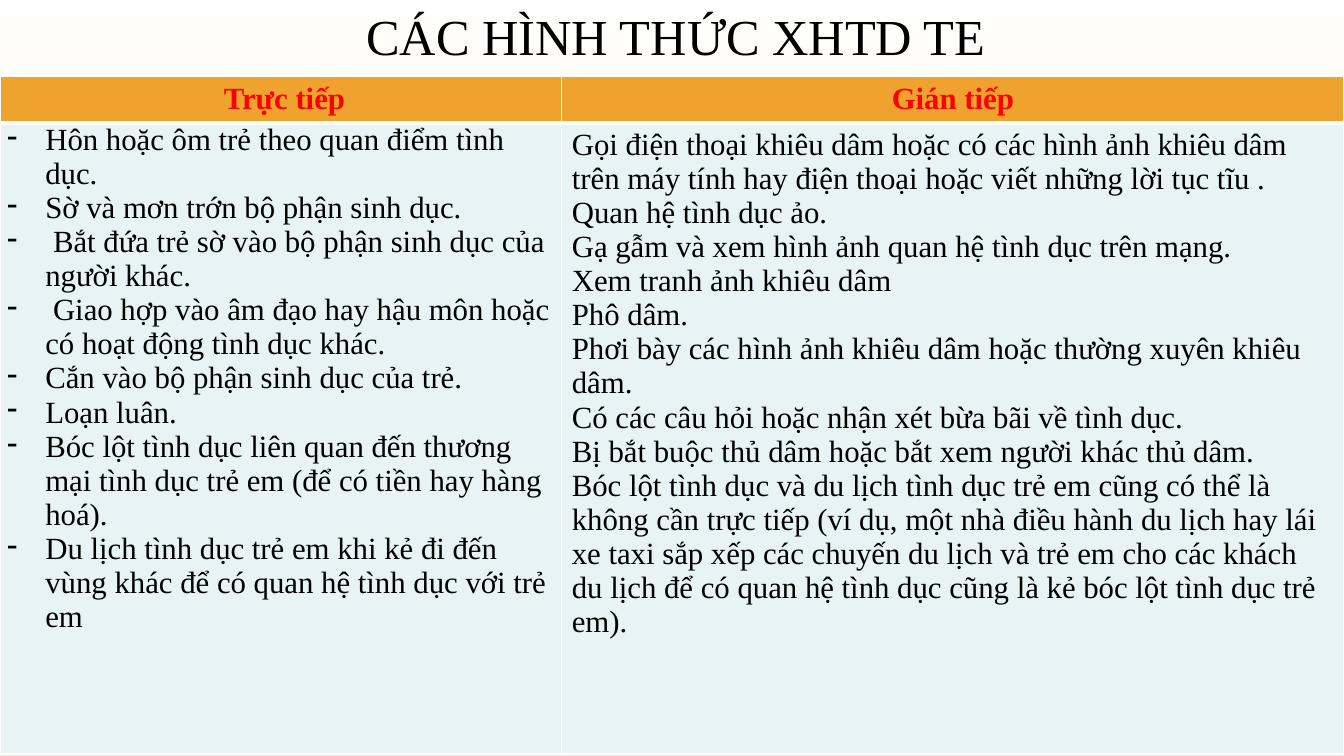
from dataclasses import dataclass

from lxml.etree import SubElement
from pptx import Presentation
from pptx.dml.color import RGBColor
from pptx.enum.text import MSO_ANCHOR, PP_ALIGN
from pptx.oxml.ns import qn
from pptx.slide import Slide
from pptx.table import _Cell
from pptx.text.text import TextFrame
from pptx.util import Emu, Inches, Pt

WIDE, HIGH = Inches(13.33), Inches(7.5)


@dataclass(frozen=True)
class Theme:
    """Colours, font and type sizes of the slide."""

    font: str = "Times New Roman"
    title: int = 36
    body: int = 22
    ink: str = "000000"
    red: str = "FF0000"
    head: str = "F0A22E"
    pale: str = "E7F3F4"
    rule: str = "FFFFFF"
    top: str = "FFFFFF"
    base: str = "FFE7A3"


@dataclass(frozen=True)
class Column:
    """One table column: its heading, share of the width and lines."""

    head: str
    share: float
    lines: tuple[str, ...]
    dash: bool = False


THEME = Theme()
TITLE = "CÁC HÌNH THỨC XHTD TE"
ROWS = (0.46, 6.26)
COLUMNS = (
    Column(" Trực tiếp", 0.418, (
        "Hôn hoặc ôm trẻ theo quan điểm tình dục.",
        "Sờ và mơn trớn bộ phận sinh dục.",
        " Bắt đứa trẻ sờ vào bộ phận sinh dục của người khác.",
        " Giao hợp vào âm đạo hay hậu môn hoặc có hoạt động tình dục khác.",
        "Cắn vào bộ phận sinh dục của trẻ.",
        "Loạn luân.",
        "Bóc lột tình dục liên quan đến thương mại tình dục trẻ em "
        "(để có tiền hay hàng hoá).",
        "Du lịch tình dục trẻ em khi kẻ đi đến vùng khác để có quan hệ "
        "tình dục với trẻ em",
    ), dash=True),
    Column("Gián tiếp", 0.582, (
        "Gọi điện thoại khiêu dâm hoặc có các hình ảnh khiêu dâm trên máy "
        "tính hay điện thoại hoặc viết những lời tục tĩu .",
        "Quan hệ tình dục ảo.",
        "Gạ gẫm và xem hình ảnh quan hệ tình dục trên mạng.",
        "Xem tranh ảnh khiêu dâm",
        "Phô dâm.",
        "Phơi bày các hình ảnh khiêu dâm hoặc thường xuyên khiêu dâm.",
        "Có các câu hỏi hoặc nhận xét bừa bãi về tình dục.",
        "Bị bắt buộc thủ dâm hoặc bắt xem người khác thủ dâm.",
        "Bóc lột tình dục và du lịch tình dục trẻ em cũng có thể là không "
        "cần trực tiếp (ví dụ, một nhà điều hành du lịch hay lái xe taxi "
        "sắp xếp các chuyến du lịch và trẻ em cho các khách du lịch để có "
        "quan hệ tình dục cũng là kẻ bóc lột tình dục trẻ em).",
    )),
)


def write(frame: TextFrame, *lines: str, size: int = THEME.body,
          color: str = THEME.ink, bold: bool = False,
          align: PP_ALIGN = PP_ALIGN.LEFT, space: float = 1.0,
          dash: bool = False) -> None:
    """Fill a text frame with one formatted paragraph per line."""
    for i, line in enumerate(lines):
        para = frame.add_paragraph() if i else frame.paragraphs[0]
        para.alignment = align
        para.line_spacing = space
        if dash:
            props = para._p.get_or_add_pPr()
            props.set("marL", str(Inches(0.38)))
            props.set("indent", str(-Inches(0.38)))
            SubElement(props, qn("a:buChar")).set("char", "-")
        run = para.add_run()
        run.text = line
        run.font.name = THEME.font
        run.font.size = Pt(size)
        run.font.bold = bold
        run.font.color.rgb = RGBColor.from_string(color)


def border(cell: _Cell, top: int, base: int) -> None:
    """Draw the four edges of a cell, given its top and bottom widths."""
    props = cell._tc.get_or_add_tcPr()
    edges = (("lnL", 1), ("lnR", 1), ("lnT", top), ("lnB", base))
    for i, (tag, width) in enumerate(edges):
        line = SubElement(props, qn(f"a:{tag}"), w=str(Pt(width)))
        fill = SubElement(line, qn("a:solidFill"))
        SubElement(fill, qn("a:srgbClr"), val=THEME.rule)
        props.insert(i, line)


def paint(cell: _Cell, color: str) -> None:
    """Fill a cell with one colour."""
    cell.fill.solid()
    cell.fill.fore_color.rgb = RGBColor.from_string(color)


def backdrop(slide: Slide) -> None:
    """Shade the slide from top to bottom."""
    fill = slide.background.fill
    fill.gradient()
    fill.gradient_angle = 270
    for stop, color in zip(fill.gradient_stops, (THEME.top, THEME.base)):
        stop.color.rgb = RGBColor.from_string(color)


def heading(slide: Slide) -> None:
    """Place and write the slide title."""
    title = slide.shapes.title
    title.left, title.top = Inches(1.71), Inches(0.02)
    title.width, title.height = Inches(9.99), Inches(0.73)
    title.text_frame.word_wrap = True
    title.text_frame.vertical_anchor = MSO_ANCHOR.MIDDLE
    write(title.text_frame, TITLE, size=THEME.title,
          align=PP_ALIGN.CENTER, space=0.9)


def grid(slide: Slide) -> None:
    """Build the table from its columns."""
    table = slide.shapes.add_table(
        len(ROWS), len(COLUMNS), 0, Inches(0.76), WIDE, Inches(sum(ROWS))
    ).table
    for row, high in zip(table.rows, ROWS):
        row.height = Inches(high)
    for i, col in enumerate(COLUMNS):
        table.columns[i].width = Emu(round(WIDE * col.share))
        head, body = table.cell(0, i), table.cell(1, i)
        paint(head, THEME.head)
        border(head, 1, 3)
        write(head.text_frame, col.head, color=THEME.red, bold=True,
              align=PP_ALIGN.CENTER)
        paint(body, THEME.pale)
        border(body, 3, 1)
        if col.dash:
            body.margin_left = body.margin_right = Inches(0.07)
            body.margin_top = body.margin_bottom = 0
        write(body.text_frame, *col.lines, dash=col.dash)


def main() -> None:
    """Build and save the slide."""
    deck = Presentation()
    deck.slide_width, deck.slide_height = WIDE, HIGH
    slide = deck.slides.add_slide(deck.slide_layouts[5])
    backdrop(slide)
    heading(slide)
    grid(slide)
    deck.save("out.pptx")


if __name__ == "__main__":
    main()
